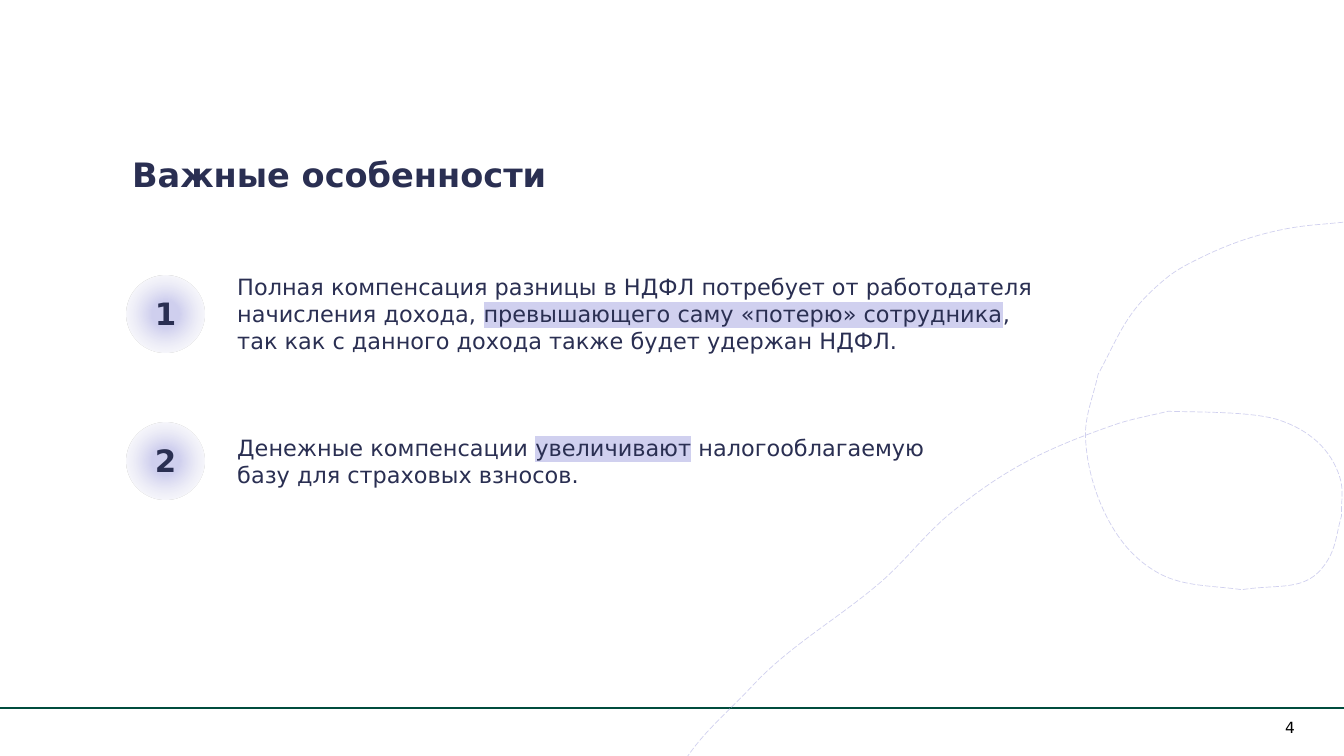
from lxml.etree import SubElement
from pptx import Presentation
from pptx.dml.color import RGBColor
from pptx.enum.dml import MSO_LINE
from pptx.enum.shapes import MSO_CONNECTOR, MSO_SHAPE
from pptx.enum.text import MSO_ANCHOR, MSO_AUTO_SIZE, PP_ALIGN
from pptx.oxml import parse_xml
from pptx.oxml.ns import nsdecls, qn
from pptx.util import Pt

PX = 9144  # 100 px to the inch
WIDTH, HEIGHT = 2667, 1500
THEME = {
    "font": "DejaVu Sans",
    "ink": RGBColor.from_string("2A2F52"),
    "black": RGBColor.from_string("000000"),
    "rule": RGBColor.from_string("004C3D"),
    "accent": "D0D0EF",
    "pale": "F9F9F9",
    "title": Pt(48), "number": Pt(44), "body": Pt(32), "page": Pt(22),
}


def place_text(shapes, box, wrap=True):
    text_box = shapes.add_textbox(*[value * PX for value in box])
    text_box.text_frame.word_wrap = wrap
    text_box.text_frame.auto_size = MSO_AUTO_SIZE.SHAPE_TO_FIT_TEXT
    return text_box.text_frame


def style_font(font, size, color=THEME["ink"], bold=False):
    font.name, font.size, font.bold = THEME["font"], size, bold
    font.color.rgb = color


presentation = Presentation()
presentation.slide_width, presentation.slide_height = WIDTH * PX, HEIGHT * PX
slide = presentation.slides.add_slide(presentation.slide_layouts[5])

# Footer rule and page number
rule = slide.shapes.add_connector(MSO_CONNECTOR.STRAIGHT, 0, 1405 * PX, WIDTH * PX, 1405 * PX)
rule.line.color.rgb = THEME["rule"]
rule.line.width = Pt(2)
SubElement(rule._element.spPr, qn("a:effectLst"))

page_frame = place_text(slide.shapes, (2544, 1425, 32, 49), wrap=False)
page_frame.margin_left = page_frame.margin_right = 6 * PX
page_frame.margin_top, page_frame.margin_bottom = 0, 12 * PX
page_frame.text = "4"
page_frame.paragraphs[0].alignment = PP_ALIGN.CENTER
style_font(page_frame.paragraphs[0].runs[0].font, THEME["page"], THEME["black"])

# Title
title = slide.shapes.title
title.left, title.top, title.width, title.height = [v * PX for v in (252, 315, 1335, 75)]
title_frame = title.text_frame
title_frame.text = "Важные особенности"
title_frame.vertical_anchor = MSO_ANCHOR.TOP
title_frame.auto_size = MSO_AUTO_SIZE.SHAPE_TO_FIT_TEXT
title_paragraph = title_frame.paragraphs[0]
title_paragraph.alignment = PP_ALIGN.LEFT
title_paragraph.line_spacing = 0.8
style_font(title_paragraph.runs[0].font, THEME["title"], bold=True)

# Numbered points: each line is a list of (text, highlighted) pieces
POINTS = [
    (172, [
        [("Полная компенсация разницы в НДФЛ потребует от работодателя начисления дохода, ", False),
         ("превышающего саму «потерю» сотрудника", True), (", ", False)],
        [("так как с данного дохода также будет удержан НДФЛ.", False)],
    ]),
    (118, [
        [("Денежные компенсации ", False), ("увеличивают", True), (" налогооблагаемую ", False)],
        [("базу для страховых взносов.", False)],
    ]),
]
DISC, FIRST_TOP, PITCH = 153, 547, 292

for index, (text_height, lines) in enumerate(POINTS):
    top = FIRST_TOP + index * PITCH
    group = slide.shapes.add_group_shape()

    # Disc with a radial fade
    disc = group.shapes.add_shape(MSO_SHAPE.OVAL, 252 * PX, top * PX, DISC * PX, DISC * PX)
    disc.shadow.inherit = False
    disc.line.fill.background()
    disc._element.spPr.find(qn("a:prstGeom")).addnext(parse_xml(
        f'<a:gradFill {nsdecls("a")} rotWithShape="1"><a:gsLst>'
        f'<a:gs pos="25000"><a:srgbClr val="{THEME["accent"]}"/></a:gs>'
        f'<a:gs pos="100000"><a:srgbClr val="{THEME["pale"]}"><a:alpha val="0"/></a:srgbClr></a:gs>'
        '</a:gsLst><a:path path="circle">'
        '<a:fillToRect l="50000" t="50000" r="50000" b="50000"/></a:path></a:gradFill>'))

    number_frame = place_text(group.shapes, (280, top + 47, 97, 69))
    number_frame.text = str(index + 1)
    number_paragraph = number_frame.paragraphs[0]
    number_paragraph.alignment = PP_ALIGN.CENTER
    number_paragraph.line_spacing = 0.8
    style_font(number_paragraph.runs[0].font, THEME["number"], bold=True)

    # Statement, centred on the disc
    text_top = top + (DISC - text_height) // 2
    paragraph = place_text(group.shapes, (461, text_top, 1817, text_height)).paragraphs[0]
    for line_index, pieces in enumerate(lines):
        if line_index:
            paragraph.add_line_break()
        for text, highlighted in pieces:
            run = paragraph.add_run()
            run.text = text
            style_font(run.font, THEME["body"])
            if highlighted:
                run._r.rPr.find(qn("a:solidFill")).addnext(parse_xml(
                    f'<a:highlight {nsdecls("a")}><a:srgbClr val="{THEME["accent"]}"/></a:highlight>'))

# Dashed decorative curve: two control points and an end point per Bézier segment
CURVE_LEFT, CURVE_TOP, CURVE_RIGHT, CURVE_BOTTOM = 876, 427, 2891, 1736
CURVE_START, CURVE_END = (2891, 438), (876, 1733)
CURVE_SEGMENTS = [
    (2793, 419, 2835, 426, 2611, 446), (2538, 452, 2464, 473, 2398, 504),
    (2369, 518, 2338, 532, 2313, 553), (2235, 617, 2225, 657, 2179, 743),
    (2171, 781, 2155, 819, 2154, 858), (2154, 936, 2186, 1028, 2237, 1087),
    (2260, 1113, 2290, 1136, 2323, 1148), (2368, 1164, 2417, 1163, 2464, 1170),
    (2549, 1157, 2600, 1178, 2640, 1102), (2652, 1078, 2654, 1050, 2662, 1024),
    (2661, 998, 2667, 972, 2659, 948), (2641, 889, 2595, 852, 2537, 833),
    (2483, 816, 2374, 818, 2318, 816), (2282, 825, 2245, 831, 2211, 843),
    (2079, 889, 1999, 927, 1889, 1016), (1838, 1057, 1799, 1110, 1750, 1153),
    (1666, 1226, 1566, 1281, 1491, 1363), (1450, 1407, 1402, 1447, 1367, 1497),
    (1277, 1623, 1422, 1424, 1276, 1597), (1271, 1603, 1239, 1644, 1223, 1658),
    (1212, 1667, 1186, 1682, 1176, 1687), (1156, 1697, 1134, 1705, 1113, 1714),
    (1104, 1718, 1096, 1725, 1086, 1726), (1028, 1733, 1060, 1730, 991, 1736),
]
builder = slide.shapes.build_freeform(*CURVE_START, scale=PX)
builder.add_line_segments([CURVE_END], close=False)
curve = builder.convert_to_shape()
curve.left, curve.top = CURVE_LEFT * PX, CURVE_TOP * PX
curve.width, curve.height = (CURVE_RIGHT - CURVE_LEFT) * PX, (CURVE_BOTTOM - CURVE_TOP) * PX

# Bend the outline: the path is measured in px from the curve's top left corner
outline = next(curve._element.iter(qn("a:path")))
outline.set("w", str(CURVE_RIGHT - CURVE_LEFT))
outline.set("h", str(CURVE_BOTTOM - CURVE_TOP))
for command in list(outline):
    outline.remove(command)
commands = [("a:moveTo", CURVE_START)]
commands += [("a:cubicBezTo", segment) for segment in CURVE_SEGMENTS]
commands += [("a:lnTo", CURVE_END)]
for tag, values in commands:
    command = SubElement(outline, qn(tag))
    for x, y in zip(values[::2], values[1::2]):
        SubElement(command, qn("a:pt"), x=str(x - CURVE_LEFT), y=str(y - CURVE_TOP))

curve.shadow.inherit = False
curve.fill.background()
curve.line.color.rgb = RGBColor.from_string(THEME["accent"])
curve.line.width = Pt(1)
curve.line.dash_style = MSO_LINE.LONG_DASH

presentation.save("out.pptx")
